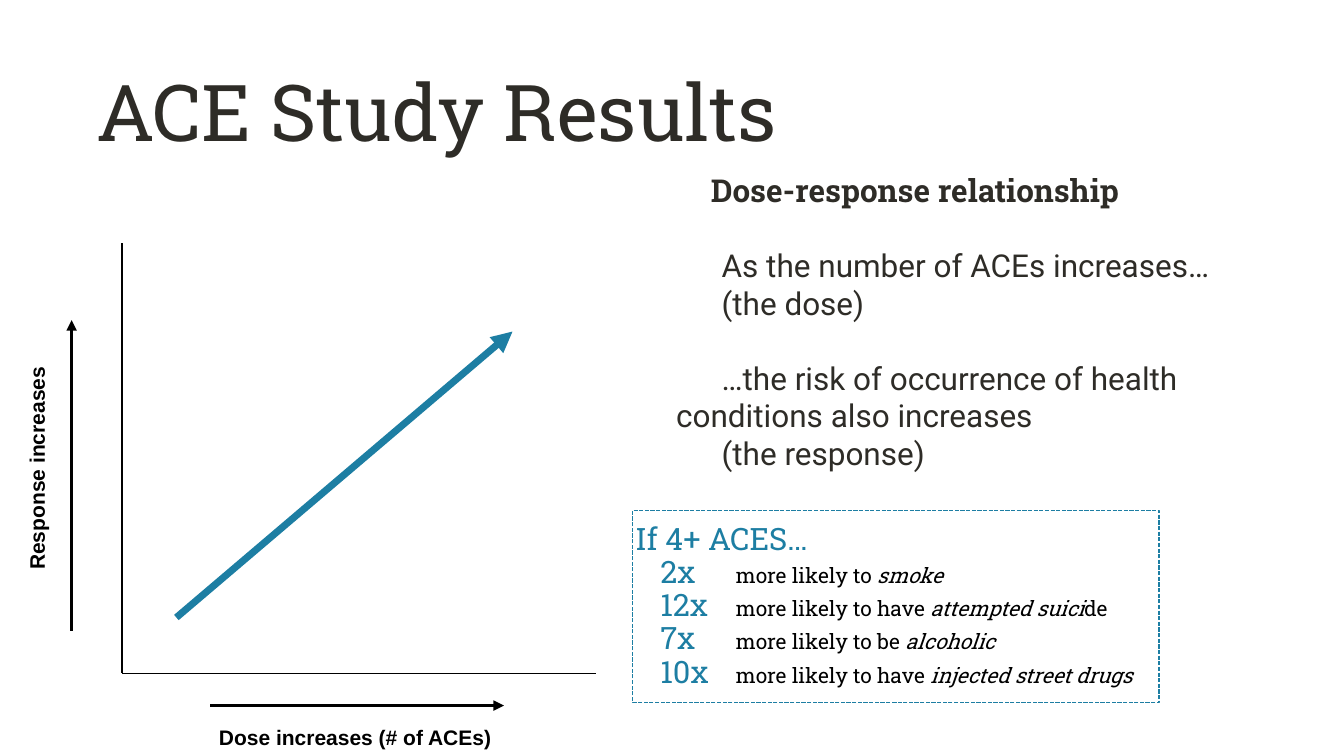
from typing import NamedTuple

import pptx
import pptx.dml.color
import pptx.enum.dml
import pptx.enum.shapes
import pptx.enum.text
import pptx.oxml
import pptx.oxml.ns
import pptx.util
from pptx.util import Cm, Pt

RGBColor = pptx.dml.color.RGBColor
INK = RGBColor(0x2E, 0x2C, 0x27)
BLACK = RGBColor(0, 0, 0)
TEAL = RGBColor(0x1D, 0x7E, 0xA3)
SLAB, SANS, LABEL_FONT = "Roboto Slab", "Roboto", "Arial"

Anchor = pptx.enum.text.MSO_ANCHOR
Align = pptx.enum.text.PP_ALIGN


class Stroke(NamedTuple):
    start: tuple[float, float]
    end: tuple[float, float]
    width: float
    color: RGBColor = BLACK
    arrow: bool = True


class AxisLabel(NamedTuple):
    text: str
    left: float
    top: float
    rotation: int = 0


class BodyLine(NamedTuple):
    text: str
    indent: float = 2.29
    before: float = 0
    font: str = SANS
    bold: bool = False


class Risk(NamedTuple):
    factor: str
    lead: str
    outcome: str
    ending: str = ""


ORIGIN = (6.15, 33.93)
STROKES = [
    Stroke((6.15, 12.27), ORIGIN, 2, arrow=False),
    Stroke(ORIGIN, (30.05, 33.93), 2, arrow=False),
    Stroke((8.89, 31.12), (25.83, 16.71), 10, TEAL),
    Stroke((10.59, 35.56), (25.4, 35.56), 5),
    Stroke((3.61, 31.78), (3.61, 16.13), 5),
]
LABELS = [
    AxisLabel("Dose increases (# of ACEs)", 7.42, 36.37),
    AxisLabel("Response increases", -8.64, 22.83, 270),
]
BODY = [
    BodyLine("Dose-response relationship", 1.75, font=SLAB, bold=True),
    BodyLine("As the number of ACEs increases…", before=53),
    BodyLine("(the dose)"),
    BodyLine("…the risk of occurrence of health conditions also increases", before=53),
    BodyLine("(the response)"),
]
RISKS = [
    Risk("2x", "more likely to ", "smoke"),
    Risk("12x", "more likely to have ", "attempted suici", "de"),
    Risk("7x", "more likely to be ", "alcoholic"),
    Risk("10x", "more likely to have ", "injected street drugs"),
]
RISK_TABS = (1.25, 5.05)


def place(shape, left: float, top: float, width: float, height: float) -> None:
    shape.left, shape.top = Cm(left), Cm(top)
    shape.width, shape.height = Cm(width), Cm(height)


def prepare_frame(shape, anchor):
    frame = shape.text_frame
    frame.word_wrap = True
    frame.auto_size = pptx.enum.text.MSO_AUTO_SIZE.NONE
    frame.vertical_anchor = anchor
    frame.margin_left = frame.margin_right = Cm(0.15)
    frame.margin_top = frame.margin_bottom = Cm(0.15)
    return frame


def style_font(font, name: str, size: float, color: RGBColor, bold: bool = False) -> None:
    font.name, font.size, font.bold = name, Pt(size), bold
    font.color.rgb = color


def next_paragraph(frame, index: int):
    return frame.add_paragraph() if index else frame.paragraphs[0]


def add_stroke(page, stroke: Stroke) -> None:
    points = [Cm(value) for value in (*stroke.start, *stroke.end)]
    line = page.shapes.add_connector(pptx.enum.shapes.MSO_CONNECTOR.STRAIGHT, *points)
    line.line.width = Pt(stroke.width)
    line.line.color.rgb = stroke.color
    if stroke.arrow:
        pptx.oxml.ns.qn("a:tailEnd")
        head = line.line._get_or_add_ln().makeelement(
            pptx.oxml.ns.qn("a:tailEnd"), {"type": "triangle"})
        line.line._get_or_add_ln().append(head)
    properties = line._element.spPr
    properties.append(properties.makeelement(pptx.oxml.ns.qn("a:effectLst"), {}))


def add_label(page, label: AxisLabel) -> None:
    box = page.shapes.add_textbox(Cm(label.left), Cm(label.top), Cm(20.96), Cm(1.55))
    box.rotation = label.rotation
    paragraph = prepare_frame(box, Anchor.MIDDLE).paragraphs[0]
    paragraph.text = label.text
    paragraph.alignment = Align.CENTER
    style_font(paragraph.font, LABEL_FONT, 30, BLACK, bold=True)


def fill_title(title) -> None:
    place(title, 4.7, 2.39, 58.34, 6.35)
    paragraph = prepare_frame(title, Anchor.MIDDLE).paragraphs[0]
    paragraph.text = "ACE Study Results"
    paragraph.alignment = Align.LEFT
    style_font(paragraph.font, SLAB, 112, INK)


def fill_body(body) -> None:
    place(body, 33.93, 8.46, 32.13, 26.67)
    frame = prepare_frame(body, Anchor.TOP)
    for index, line in enumerate(BODY):
        paragraph = next_paragraph(frame, index)
        paragraph.text = line.text
        properties = paragraph._p.get_or_add_pPr()
        properties.set("marL", "0")
        properties.set("indent", str(Cm(line.indent)))
        properties.append(properties.makeelement(pptx.oxml.ns.qn("a:buNone"), {}))
        paragraph.space_before = Pt(line.before)
        style_font(paragraph.font, line.font, 45, INK, line.bold)


def add_span(paragraph, text: str, size: float, color: RGBColor, italic: bool = False) -> None:
    span = paragraph.add_run()
    span.text = text
    span.font.size, span.font.italic = Pt(size), italic
    span.font.color.rgb = color


def add_risk_box(page) -> None:
    box = page.shapes.add_shape(pptx.enum.shapes.MSO_SHAPE.RECTANGLE,
                                Cm(31.88), Cm(25.73), Cm(26.54), Cm(9.68))
    box.shadow.inherit = False
    box.fill.background()
    box.line.color.rgb = TEAL
    box.line.width = Pt(2)
    box.line.dash_style = pptx.enum.dml.MSO_LINE.SQUARE_DOT
    frame = prepare_frame(box, Anchor.MIDDLE)
    for index, risk in enumerate([None, *RISKS]):
        paragraph = next_paragraph(frame, index)
        paragraph.alignment = Align.LEFT
        paragraph.line_spacing = 0.9
        properties = paragraph._p.get_or_add_pPr()
        if risk is None:
            add_span(paragraph, "If 4+ ACES…", 44, TEAL)
        else:
            stops = properties.makeelement(pptx.oxml.ns.qn("a:tabLst"), {})
            for position in RISK_TABS:
                stops.append(stops.makeelement(
                    pptx.oxml.ns.qn("a:tab"), {"pos": str(Cm(position)), "algn": "l"}))
            properties.append(stops)
            add_span(paragraph, "\t" + risk.factor, 44, TEAL)
            add_span(paragraph, "\t" + risk.lead, 30, BLACK)
            add_span(paragraph, risk.outcome, 30, BLACK, italic=True)
            if risk.ending:
                add_span(paragraph, risk.ending, 30, BLACK)
        paragraph.font.name = SLAB


def main() -> None:
    deck = pptx.Presentation()
    deck.slide_width, deck.slide_height = Cm(67.74), Cm(38.1)
    page = deck.slides.add_slide(deck.slide_layouts[1])
    fill_title(page.shapes.title)
    fill_body(page.placeholders[1])
    for stroke in STROKES:
        add_stroke(page, stroke)
    for label in LABELS:
        add_label(page, label)
    add_risk_box(page)
    deck.save("out.pptx")


if __name__ == "__main__":
    main()
